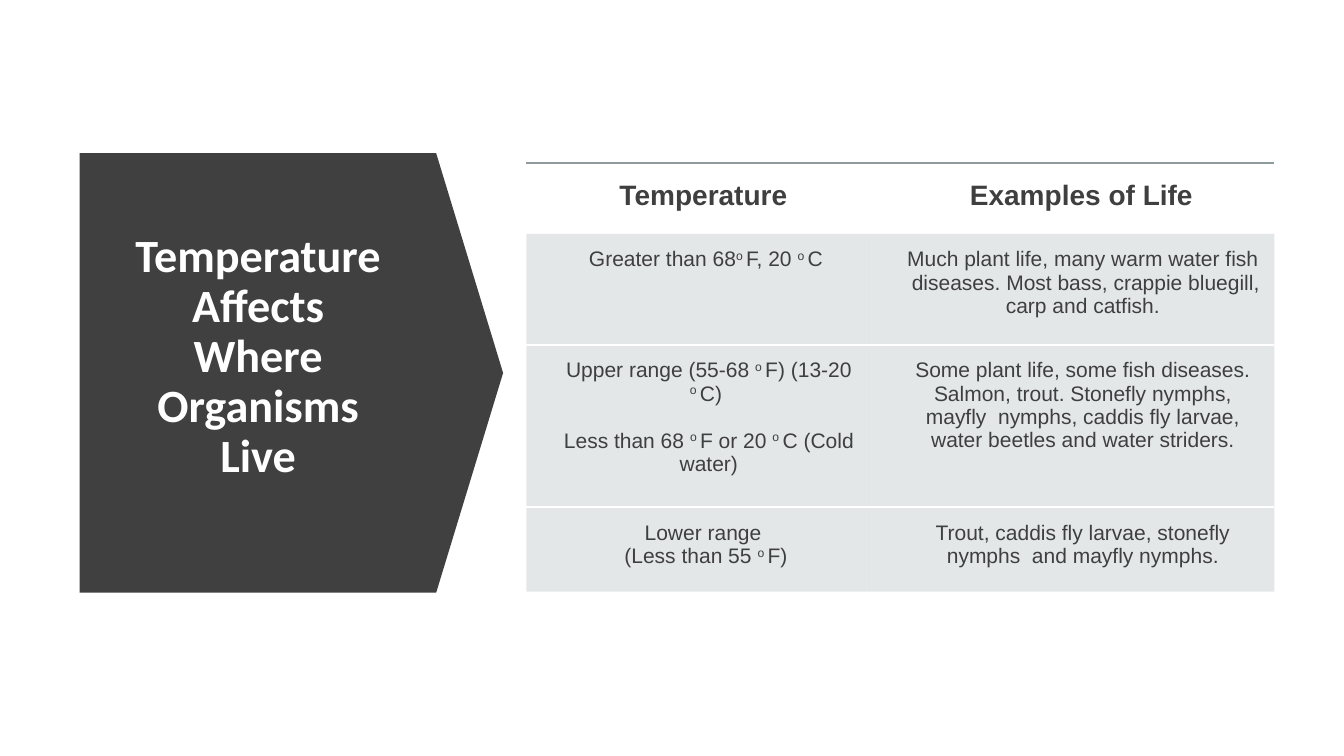
"""Build a slide on how water temperature affects where organisms live."""
import lxml.etree
import pptx
import pptx.dml.color
import pptx.enum.shapes
import pptx.enum.text
import pptx.oxml
import pptx.oxml.ns
import pptx.util

Inches, Pt = pptx.util.Inches, pptx.util.Pt
RGBColor = pptx.dml.color.RGBColor
qn = pptx.oxml.ns.qn
CENTER = pptx.enum.text.PP_ALIGN.CENTER
MIDDLE = pptx.enum.text.MSO_ANCHOR.MIDDLE
WHITE = RGBColor(0xFF, 0xFF, 0xFF)
CHARCOAL = RGBColor(0x40, 0x40, 0x40)
TEXT = RGBColor(0x3F, 0x3F, 0x3F)
RULE = RGBColor(0x8F, 0x9A, 0x9D)
BAND = RGBColor(0xB4, 0xBC, 0xBE)
NO_STYLE = "{2D5ABB26-0587-4C30-8999-92F81FD0307C}"
COL_WIDTHS = [3.4, 4.02]
ROW_HEIGHTS = [0.7, 1.1, 1.61, 0.84]
DEGREE = "^"
ROWS = [
    [["Temperature "], ["Examples of Life"]],
    [["Greater than 68^F, 20 ^C "],
     ["Much plant life, many warm water fish  diseases. "
      "Most bass, crappie bluegill, carp and catfish."]],
    [["Upper range (55-68 ^F) (13-20 ^C) ", "Less than 68 ^F or 20 ^C (Cold water)"],
     ["Some plant life, some fish diseases. Salmon, trout. Stonefly nymphs, "
      "mayfly  nymphs, caddis fly larvae, water beetles and water striders."]],
    [["Lower range  ", "(Less than 55 ^F) "],
     ["Trout, caddis fly larvae, stonefly nymphs  and mayfly nymphs."]],
]


def add_border(cell, position, side, color, alpha):
    line = pptx.oxml.parse_xml(
        f'<a:{side} xmlns:a="http://schemas.openxmlformats.org/drawingml/2006/main" '
        f'w="{Pt(1.5)}"><a:solidFill><a:srgbClr val="{color}">'
        f'<a:alpha val="{alpha * 1000}"/></a:srgbClr></a:solidFill></a:{side}>')
    cell._tc.get_or_add_tcPr().insert(position, line)


def fill_paragraph(p, text, size, bold):
    p.alignment = CENTER
    p.font.name, p.font.size, p.font.bold = "Arial", Pt(size), bold
    p.font.color.rgb = TEXT
    p._p.get_or_add_pPr().set("marL", str(Inches(0.08)))
    for i, part in enumerate(text.split(DEGREE)):
        if i:
            r = p.add_run()
            r.text = "o "
            r.font._element.set("baseline", "30000")
        p.add_run().text = part


prs = pptx.Presentation()
prs.slide_width, prs.slide_height = Inches(13.33), Inches(7.5)
s = prs.slides.add_slide(prs.slide_layouts[5])

arrow = s.shapes.add_shape(pptx.enum.shapes.MSO_SHAPE.DOWN_ARROW,
                           Inches(0.71), Inches(1.6), Inches(4.36), Inches(4.2))
arrow.rotation = 270
arrow.adjustments[0], arrow.adjustments[1] = 1, 0.158
arrow.shadow.inherit = False
arrow.fill.solid()
arrow.fill.fore_color.rgb = CHARCOAL
arrow.line.fill.background()

title = s.shapes.title
title.left, title.top = Inches(1.12), Inches(2.15)
title.width, title.height = Inches(2.88), Inches(2.79)
tf = title.text_frame
tf.text = "Temperature Affects Where Organisms Live"
tf.word_wrap, tf.vertical_anchor = True, MIDDLE
p = tf.paragraphs[0]
p.alignment, p.line_spacing = CENTER, 0.9
p.font.name, p.font.size, p.font.bold = "Calibri", Pt(33), True
p.font.color.rgb = WHITE
s.shapes._spTree.append(title._element)

table = s.shapes.add_table(len(ROW_HEIGHTS), len(COL_WIDTHS), Inches(5.22), Inches(1.62),
                           Inches(sum(COL_WIDTHS)), Inches(sum(ROW_HEIGHTS))).table
table.first_row = table.horz_banding = False
table._tbl.tblPr.find(qn("a:tableStyleId")).text = NO_STYLE
for column, width in zip(table.columns, COL_WIDTHS):
    column.width = Inches(width)
for row, height in zip(table.rows, ROW_HEIGHTS):
    row.height = Inches(height)

for i, row in enumerate(ROWS):
    header = i == 0
    margin = Inches(0.17 if header else 0.14)
    for j, lines in enumerate(row):
        cell = table.cell(i, j)
        cell.margin_left = Inches(0.28)
        cell.margin_right = cell.margin_top = cell.margin_bottom = margin
        tf = cell.text_frame
        for k, text in enumerate(lines):
            p = tf.add_paragraph() if k else tf.paragraphs[0]
            fill_paragraph(p, text, 20 if header else 15, header)
            if k and i == 2:
                p.space_before = Pt(17)
        if header:
            cell.fill.background()
            add_border(cell, 0, "lnT", RULE, 60)
            continue
        cell.fill.solid()
        cell.fill.fore_color.rgb = BAND
        tint = cell._tc.tcPr.find(f".//{qn('a:srgbClr')}")
        lxml.etree.SubElement(tint, qn("a:alpha")).set("val", "35000")
        if i < len(ROWS) - 1:
            add_border(cell, 0, "lnB", WHITE, 100)
        if i > 1:
            add_border(cell, 0, "lnT", WHITE, 100)

prs.save("out.pptx")
